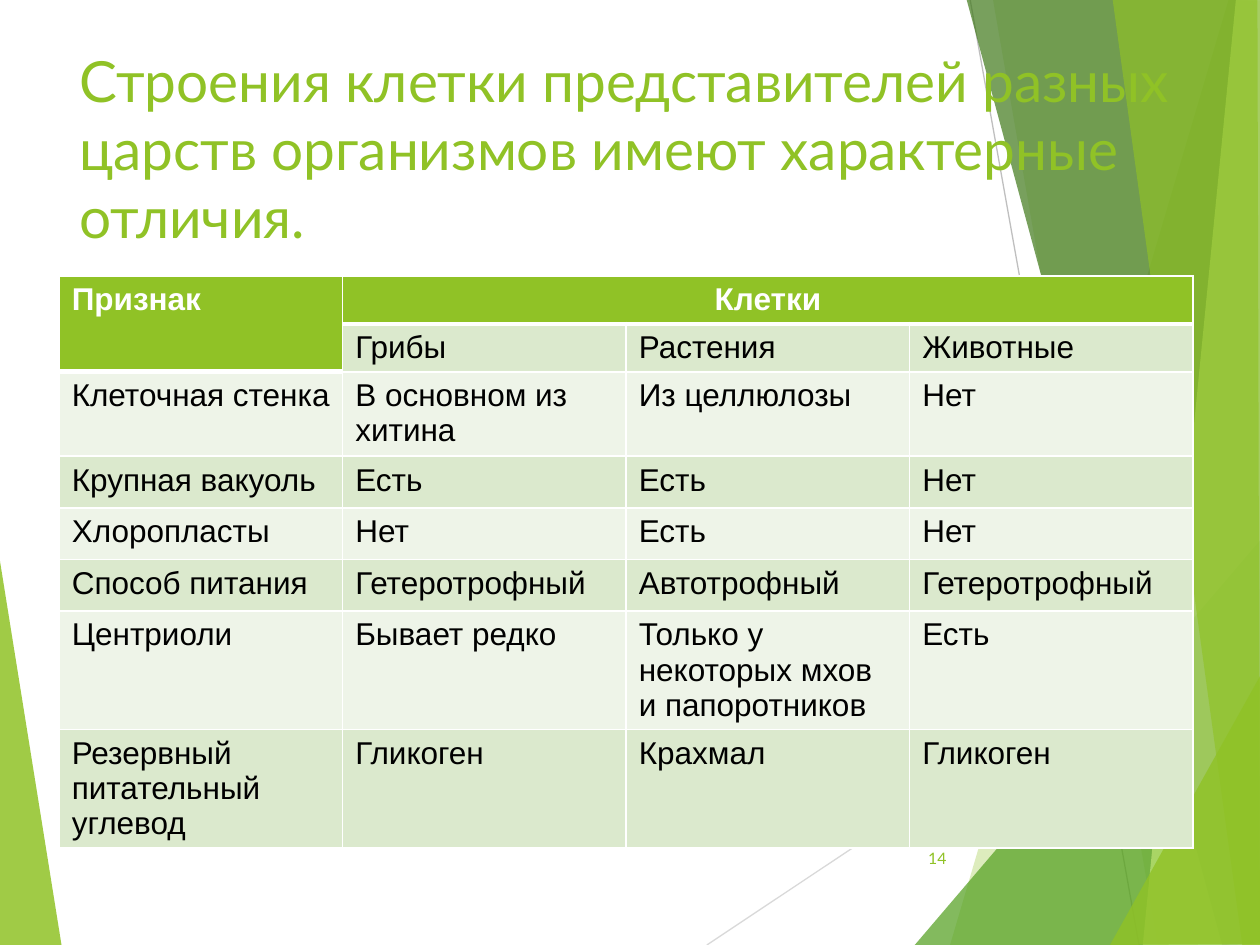
from lxml import etree
from pptx import Presentation
from pptx.dml.color import RGBColor
from pptx.enum import shapes, text
from pptx.oxml.ns import qn
from pptx.util import Inches, Pt

COLORS = {
    "green": "90C226", "leaf": "54A021", "forest": "3F7819", "lime": "C0E474",
    "line_light": "D9D9D9", "line_dark": "BFBFBF",
    "band_dark": "DBE9CD", "band_light": "EEF4E8",
    "white": "FFFFFF", "black": "000000",
}

# colour, opacity in percent, corner points in inches
FACETS = [
    ("green", 85, [(-0.01, 4.39), (0.49, 7.51), (-0.01, 7.5)]),
    ("green", 30, [(9.75, 0), (7.54, 7.5), (10.02, 7.51), (10.01, 0.01)]),
    ("green", 20, [(7.88, -0.01), (9.19, 7.5), (10.01, 7.5), (10.01, -0.01)]),
    ("leaf", 72, [(7.26, 7.5), (10, 4.29), (10.01, 7.5)]),
    ("forest", 70, [(7.67, -0.01), (9.7, 7.5), (10.01, 7.49), (10.01, -0.01)]),
    ("lime", 70, [(9.81, -0.01), (9.07, 7.5), (10.01, 7.5), (10, -0.01)]),
    ("green", 65, [(8.83, -0.01), (9.86, 7.5), (10, 7.5), (9.98, -0.01)]),
    ("green", 80, [(8.81, 7.5), (10.01, 5.35), (10.01, 7.49)]),
]
RAYS = [
    ("line_light", (5.61, 7.5), (10.01, 4.57)),
    ("line_dark", (7.7, 0), (9.04, 7.5)),
]

TITLE = "Строения клетки представителей разных царств организмов имеют характерные отличия."
ROWS = [
    ["Признак", "Клетки", "", ""],
    ["", "Грибы", "Растения", "Животные"],
    ["Клеточная стенка", "В основном из хитина", "Из целлюлозы", "Нет"],
    ["Крупная вакуоль", "Есть", "Есть", "Нет"],
    ["Хлоропласты", "Нет", "Есть", "Нет"],
    ["Способ питания", "Гетеротрофный", "Автотрофный", "Гетеротрофный"],
    ["Центриоли", "Бывает редко", "Только у некоторых мхов и папоротников", "Есть"],
    ["Резервный питательный углевод", "Гликоген", "Крахмал", "Гликоген"],
]
ROW_HEIGHTS = [0.38, 0.38, 0.67, 0.41, 0.41, 0.41, 0.94, 0.94]


def rgb(name):
    return RGBColor.from_string(COLORS[name])


def write(frame, words, size, font="Arial", color="black", bold=False,
          align=text.PP_ALIGN.LEFT, anchor=None):
    frame.word_wrap = True
    if anchor is not None:
        frame.vertical_anchor = anchor
    paragraph = frame.paragraphs[0]
    paragraph.alignment = align
    run = paragraph.add_run()
    run.text = words
    run.font.size = Pt(size)
    run.font.name = font
    run.font.bold = bold
    run.font.color.rgb = rgb(color)


def add_facet(slide, color, opacity, points):
    corners = [(Inches(x), Inches(y)) for x, y in points]
    builder = slide.shapes.build_freeform(*corners[0])
    builder.add_line_segments(corners[1:], close=True)
    shape = builder.convert_to_shape()
    shape.shadow.inherit = False
    shape.line.fill.background()
    shape.fill.solid()
    shape.fill.fore_color.rgb = rgb(color)
    fill_color = shape.element.spPr.find(".//" + qn("a:srgbClr"))
    etree.SubElement(fill_color, qn("a:alpha"), val=str(opacity * 1000))


def add_ray(slide, color, start, end):
    ray = slide.shapes.add_connector(
        shapes.MSO_CONNECTOR.STRAIGHT, *map(Inches, start + end))
    ray.line.color.rgb = rgb(color)
    ray.line.width = Pt(0.75)
    etree.SubElement(ray.element.spPr, qn("a:effectLst"))


def add_decoration(slide):
    add_facet(slide, *FACETS[0])
    for ray in RAYS:
        add_ray(slide, *ray)
    for facet in FACETS[1:]:
        add_facet(slide, *facet)


def place_title(slide, left, top, width, height):
    title = slide.shapes.title
    slide.shapes.element.append(title.element)  # in front of the decoration
    title.left, title.top = Inches(left), Inches(top)
    title.width, title.height = Inches(width), Inches(height)
    title.text_frame.auto_size = text.MSO_AUTO_SIZE.NONE
    write(title.text_frame, TITLE, 32.4, font="Lato", color="green",
          anchor=text.MSO_ANCHOR.TOP)


def set_borders(cell, widths):
    """Draw white borders; widths maps a side (L, R, T, B) to points."""
    properties = cell._tc.get_or_add_tcPr()
    for side, width in widths.items():
        border = etree.SubElement(properties, qn("a:ln" + side), w=str(Pt(width)))
        fill = etree.SubElement(border, qn("a:solidFill"))
        etree.SubElement(fill, qn("a:srgbClr"), val=COLORS["white"])


def add_comparison_table(slide, left, top, width):
    row_count, column_count = len(ROWS), len(ROWS[0])
    table = slide.shapes.add_table(
        row_count, column_count, Inches(left), Inches(top), Inches(width),
        Inches(sum(ROW_HEIGHTS))).table
    for column in table.columns:
        column.width = Inches(width / column_count)
    for row, height in zip(table.rows, ROW_HEIGHTS):
        row.height = Inches(height)
    table.cell(0, 0).merge(table.cell(1, 0))
    table.cell(0, 1).merge(table.cell(0, column_count - 1))

    for i, words in enumerate(ROWS):
        for j, word in enumerate(words):
            cell = table.cell(i, j)
            header = i == 0 or (i == 1 and j == 0)
            widths = {"L": 1, "R": 1}
            if i == 0:
                widths["T"] = 1
            widths["B"] = 3 if header else 1
            set_borders(cell, widths)
            band = "band_dark" if i % 2 else "band_light"
            cell.fill.solid()
            cell.fill.fore_color.rgb = rgb("green" if header else band)
            if word:
                centred = header and j > 0
                write(cell.text_frame, word, 18, bold=header,
                      color="white" if header else "black",
                      align=text.PP_ALIGN.CENTER if centred else text.PP_ALIGN.LEFT)


def add_slide_number(slide, left, top, width, height):
    box = slide.shapes.add_textbox(*map(Inches, (left, top, width, height)))
    write(box.text_frame, "14", 9, font="Lato", color="green",
          align=text.PP_ALIGN.RIGHT, anchor=text.MSO_ANCHOR.MIDDLE)


def main():
    presentation = Presentation()
    presentation.slide_width, presentation.slide_height = Inches(10), Inches(7.5)
    slide = presentation.slides.add_slide(presentation.slide_layouts[5])
    add_decoration(slide)
    place_title(slide, 0.53, 0.31, 9, 1.25)
    add_comparison_table(slide, 0.47, 2.19, 9)
    add_slide_number(slide, 7.05, 6.61, 0.56, 0.4)
    presentation.save("out.pptx")


if __name__ == "__main__":
    main()
